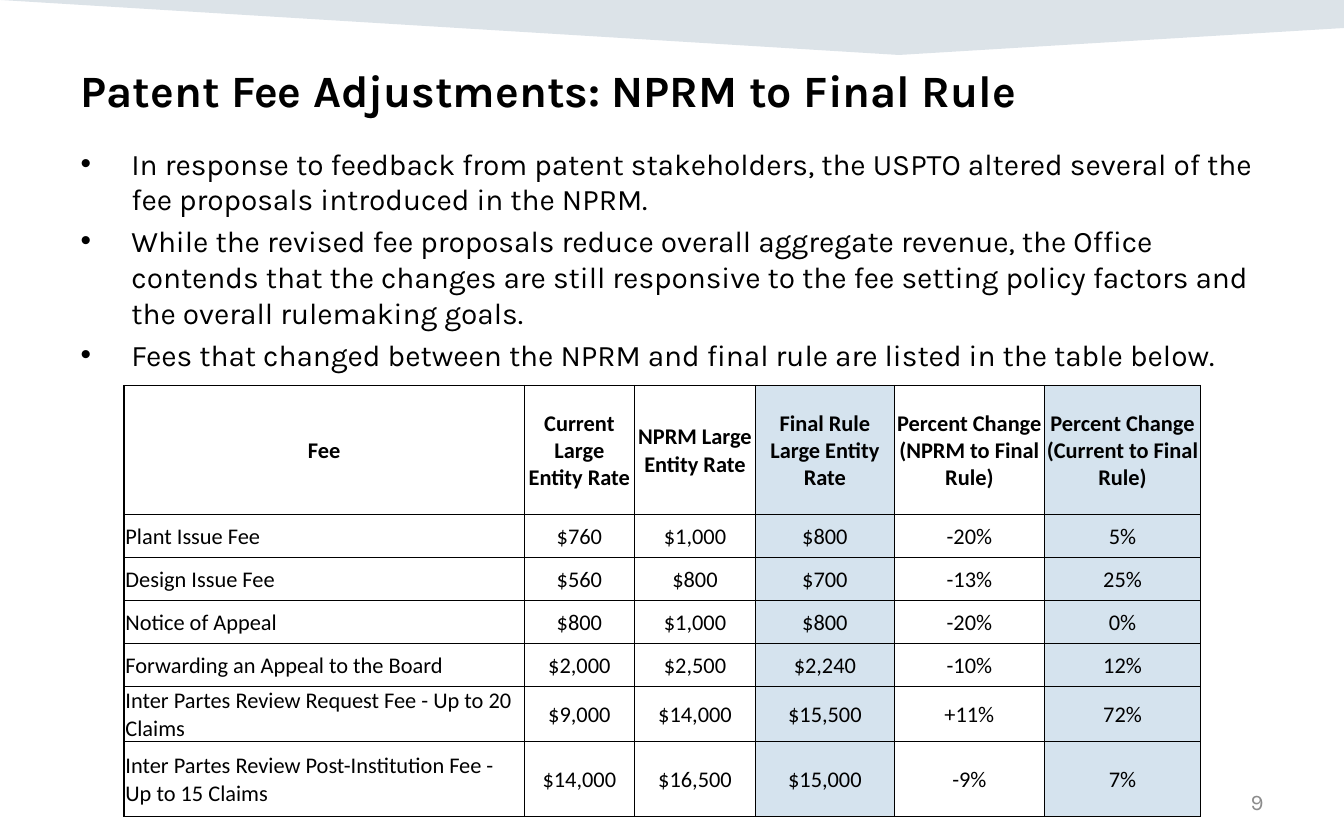
from dataclasses import dataclass

from lxml.etree import SubElement
from pptx import Presentation
from pptx.dml.color import RGBColor
from pptx.enum.text import MSO_ANCHOR, MSO_AUTO_SIZE, PP_ALIGN
from pptx.oxml.ns import qn
from pptx.shapes.base import BaseShape
from pptx.slide import Slide
from pptx.table import _Cell
from pptx.text.text import TextFrame
from pptx.util import Cm, Pt


@dataclass(frozen=True)
class Theme:
    heading_font: str = "Karla"
    table_font: str = "Calibri"
    ink: str = "000000"
    paper: str = "FFFFFF"
    banner: str = "164469"
    banner_opacity: int = 15
    highlight: str = "D5E3EE"
    muted: str = "8C8C8C"
    title_size: int = 24
    body_size: int = 16
    small_size: int = 12
    thin_line: float = 0.5
    outer_line: float = 1


@dataclass(frozen=True)
class Box:
    left: float
    top: float
    width: float
    height: float


@dataclass(frozen=True)
class Column:
    heading: str
    width: float
    highlighted: bool = False


@dataclass(frozen=True)
class FeeRow:
    height: float
    values: tuple[str, ...]


THEME = Theme()
SLIDE_WIDTH, SLIDE_HEIGHT = 25.4, 15.88
TITLE_BOX = Box(1.27, 1.04, 22.86, 1.3)
BODY_BOX = Box(1.27, 2.62, 22.86, 5.46)
NUMBER_BOX = Box(18.21, 14.73, 5.92, 0.84)
TABLE_LEFT, TABLE_TOP = 2.34, 7.29
HEADER_HEIGHT, ROW_HEIGHT, LAST_ROW_HEIGHT = 2.44, 0.81, 1.42
CELL_MARGIN = 0.03
BULLET_INDENT = 0.96
BANNER_POINTS = ((0, 0), (SLIDE_WIDTH, 0), (SLIDE_WIDTH, 0.53), (16.99, 1.04))

TITLE = "Patent Fee Adjustments: NPRM to Final Rule"
BULLETS = (
    "In response to feedback from patent stakeholders, the USPTO altered several of the "
    "fee proposals introduced in the NPRM.",
    "While the revised fee proposals reduce overall aggregate revenue, the Office contends "
    "that the changes are still responsive to the fee setting policy factors and the "
    "overall rulemaking goals.",
    "Fees that changed between the NPRM and final rule are listed in the table below.",
)
COLUMNS = (
    Column("Fee", 7.57),
    Column("Current Large Entity Rate", 2.08),
    Column("NPRM Large Entity Rate", 2.29),
    Column("Final Rule Large Entity Rate", 2.62, True),
    Column("Percent Change\n(NPRM to Final Rule)", 2.84),
    Column("Percent Change\n(Current to Final Rule)", 2.95, True),
)
FEES = (
    FeeRow(ROW_HEIGHT, ("Plant Issue Fee", "$760", "$1,000", "$800", "-20%", "5%")),
    FeeRow(ROW_HEIGHT, ("Design Issue Fee", "$560", "$800", "$700", "-13%", "25%")),
    FeeRow(ROW_HEIGHT, ("Notice of Appeal", "$800", "$1,000", "$800", "-20%", "0%")),
    FeeRow(ROW_HEIGHT, ("Forwarding an Appeal to the Board",
                        "$2,000", "$2,500", "$2,240", "-10%", "12%")),
    FeeRow(ROW_HEIGHT, ("Inter Partes Review Request Fee - Up to 20 Claims",
                        "$9,000", "$14,000", "$15,500", "+11%", "72%")),
    FeeRow(LAST_ROW_HEIGHT, ("Inter Partes Review Post-Institution Fee - Up to 15 Claims",
                             "$14,000", "$16,500", "$15,000", "-9%", "7%")),
)


def place(shape: BaseShape, box: Box) -> None:
    shape.left, shape.top = Cm(box.left), Cm(box.top)
    shape.width, shape.height = Cm(box.width), Cm(box.height)


def write_text(frame: TextFrame, text: str, font: str, size: int, color: str,
               alignment: PP_ALIGN, bold: bool = False) -> None:
    frame.text = text
    frame.word_wrap = True
    for paragraph in frame.paragraphs:
        paragraph.alignment = alignment
        paragraph.font.name = font
        paragraph.font.size = Pt(size)
        paragraph.font.bold = bold
        paragraph.font.color.rgb = RGBColor.from_string(color)


def draw_banner(slide: Slide) -> None:
    start, *corners = [(Cm(x), Cm(y)) for x, y in BANNER_POINTS]
    builder = slide.shapes.build_freeform(*start)
    builder.add_line_segments(corners, close=True)
    banner = builder.convert_to_shape()
    banner.shadow.inherit = False
    banner.line.fill.background()
    banner.fill.solid()
    banner.fill.fore_color.rgb = RGBColor.from_string(THEME.banner)
    color = banner.fill._xPr.find(qn("a:solidFill"))[0]
    SubElement(color, qn("a:alpha"), val=str(THEME.banner_opacity * 1000))


def write_title(slide: Slide) -> None:
    title = slide.shapes.title
    place(title, TITLE_BOX)
    write_text(title.text_frame, TITLE, THEME.heading_font, THEME.title_size,
               THEME.ink, PP_ALIGN.LEFT, bold=True)
    title.text_frame.auto_size = MSO_AUTO_SIZE.NONE
    title.text_frame.vertical_anchor = MSO_ANCHOR.MIDDLE


def write_bullets(slide: Slide) -> None:
    body = slide.placeholders[1]
    place(body, BODY_BOX)
    frame = body.text_frame
    write_text(frame, "\n".join(BULLETS), THEME.heading_font, THEME.body_size,
               THEME.ink, PP_ALIGN.LEFT)
    frame.auto_size = MSO_AUTO_SIZE.NONE
    for paragraph in frame.paragraphs:
        properties = paragraph._p.get_or_add_pPr()
        properties.set("marL", str(Cm(BULLET_INDENT)))
        properties.set("indent", str(-Cm(BULLET_INDENT)))


def write_slide_number(slide: Slide) -> None:
    box = NUMBER_BOX
    number = slide.shapes.add_textbox(Cm(box.left), Cm(box.top), Cm(box.width), Cm(box.height))
    write_text(number.text_frame, "9", THEME.heading_font, THEME.small_size,
               THEME.muted, PP_ALIGN.RIGHT)
    number.text_frame.vertical_anchor = MSO_ANCHOR.MIDDLE


def set_borders(cell: _Cell, widths: dict[str, float]) -> None:
    properties = cell._tc.get_or_add_tcPr()
    for position, (side, width) in enumerate(widths.items()):
        line = SubElement(properties, qn(f"a:{side}"), w=str(Pt(width)))
        fill = SubElement(line, qn("a:solidFill"))
        SubElement(fill, qn("a:srgbClr"), val=THEME.ink)
        properties.insert(position, line)


def format_cell(cell: _Cell, text: str, row: int, column: int) -> None:
    header = row == 0
    alignment = PP_ALIGN.CENTER if header or column else PP_ALIGN.LEFT
    write_text(cell.text_frame, text, THEME.table_font, THEME.small_size,
               THEME.ink, alignment, bold=header)
    cell.vertical_anchor = MSO_ANCHOR.MIDDLE
    cell.margin_left = cell.margin_right = cell.margin_top = Cm(CELL_MARGIN)
    cell.margin_bottom = 0
    cell.fill.solid()
    color = THEME.highlight if COLUMNS[column].highlighted else THEME.paper
    cell.fill.fore_color.rgb = RGBColor.from_string(color)
    set_borders(cell, {
        "lnL": THEME.thin_line if column else THEME.outer_line,
        "lnR": THEME.thin_line,
        "lnT": THEME.outer_line if header else THEME.thin_line,
        "lnB": THEME.thin_line,
    })


def draw_fee_table(slide: Slide) -> None:
    rows = (FeeRow(HEADER_HEIGHT, tuple(column.heading for column in COLUMNS)), *FEES)
    width = sum(column.width for column in COLUMNS)
    height = sum(row.height for row in rows)
    table = slide.shapes.add_table(len(rows), len(COLUMNS), Cm(TABLE_LEFT), Cm(TABLE_TOP),
                                   Cm(width), Cm(height)).table
    table.first_row = table.horz_banding = False
    for table_column, column in zip(table.columns, COLUMNS):
        table_column.width = Cm(column.width)
    for row_index, row in enumerate(rows):
        table.rows[row_index].height = Cm(row.height)
        for column_index, text in enumerate(row.values):
            format_cell(table.cell(row_index, column_index), text, row_index, column_index)


def main() -> None:
    presentation = Presentation()
    presentation.slide_width, presentation.slide_height = Cm(SLIDE_WIDTH), Cm(SLIDE_HEIGHT)
    slide = presentation.slides.add_slide(presentation.slide_layouts[1])
    draw_banner(slide)
    write_title(slide)
    write_bullets(slide)
    write_slide_number(slide)
    draw_fee_table(slide)
    presentation.save("out.pptx")


if __name__ == "__main__":
    main()
